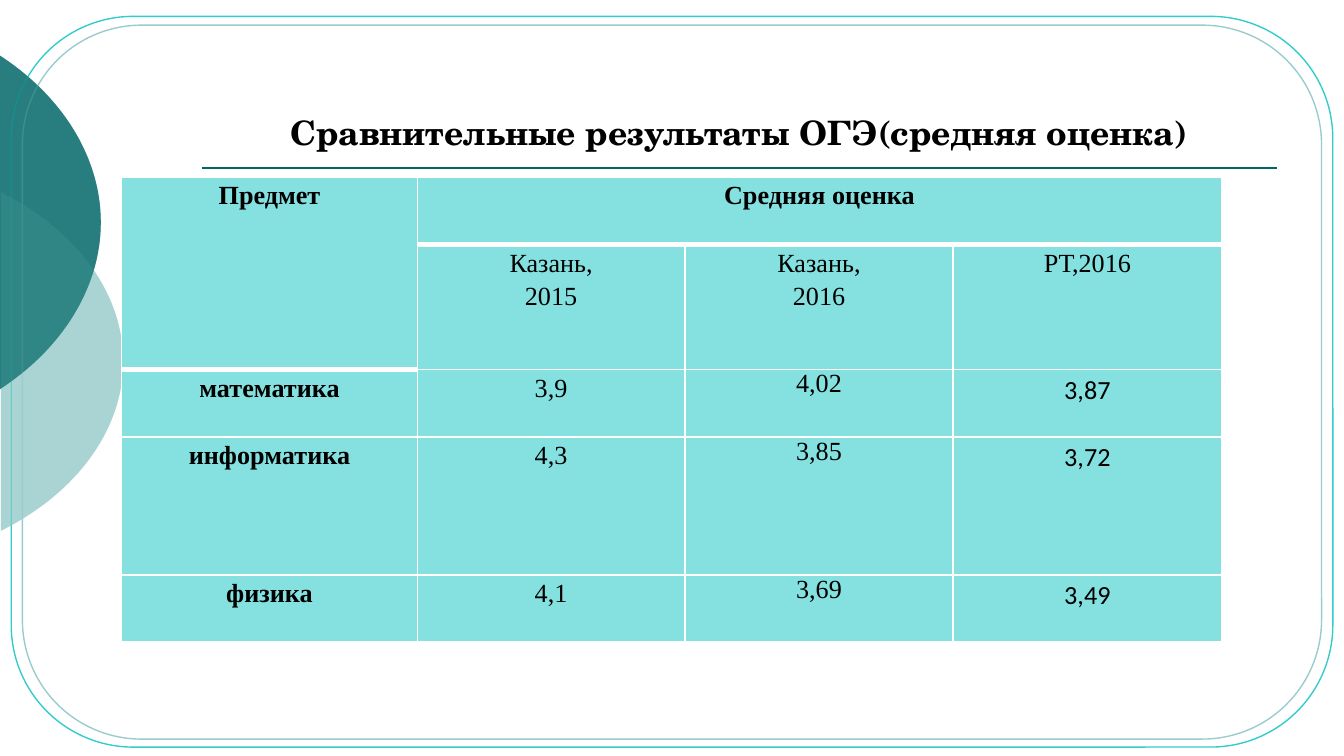
from dataclasses import dataclass

from lxml.etree import SubElement
from pptx import Presentation
from pptx.dml.color import RGBColor as RGB
from pptx.enum.shapes import MSO_CONNECTOR as CONN, MSO_SHAPE as SHAPE
from pptx.enum.text import MSO_ANCHOR as ANCHOR, MSO_AUTO_SIZE as AUTO, PP_ALIGN as ALIGN
from pptx.oxml.ns import qn
from pptx.util import Pt


@dataclass(frozen=True)
class Theme:
    dark: str = "006666"
    light: str = "99CCCC"
    bright: str = "33CCCC"
    cell: str = "85E0E0"
    grid: str = "FFFFFF"
    text: str = "000000"
    title_font: str = "TeX Gyre Schola"
    table_font: str = "Times New Roman"
    number_font: str = "Calibri"
    title_size: int = 18
    table_size: int = 14


class Deck:
    """Draws elements on the current slide in one theme, with lengths in points."""

    def __init__(self, theme, width, height):
        self.theme = theme
        self.prs = Presentation()
        self.prs.slide_width, self.prs.slide_height = Pt(width), Pt(height)
        self.s = self.prs.slides.add_slide(self.prs.slide_layouts[5])

    def style(self, p, font, size, bold):
        p.alignment = ALIGN.CENTER
        p.font.name, p.font.size, p.font.bold = font, Pt(size), bold
        p.font.color.rgb = RGB.from_string(self.theme.text)

    def title(self, text, x, y, w, h):
        sp = self.s.shapes.title
        sp.left, sp.top, sp.width, sp.height = map(Pt, (x, y, w, h))
        tf = sp.text_frame
        tf.text = text
        tf.auto_size, tf.word_wrap = AUTO.NONE, True
        tf.vertical_anchor = ANCHOR.BOTTOM
        self.style(tf.paragraphs[0], self.theme.title_font, self.theme.title_size, True)

    def crescent(self, x, y, w, h, start, bend, rise, color, opacity):
        builder = self.s.shapes.build_freeform(Pt(x), Pt(y))
        builder.add_line_segments([(Pt(x + w), Pt(y)), (Pt(x + w), Pt(y + h))])
        sp = builder.convert_to_shape()
        sp.shadow.inherit = False
        sp.line.fill.background()
        sp.fill.solid()
        sp.fill.fore_color.rgb = RGB.from_string(color)
        clr = next(sp._element.iter(qn("a:srgbClr")))
        SubElement(clr, qn("a:alpha"), val=str(opacity * 1000))
        outline = next(sp._element.iter(qn("a:path")))
        for child in list(outline):
            outline.remove(child)
        upper = [start, bend, (w, rise), (w, h / 2)]
        lower = [(px, h - py) for px, py in reversed(upper[:3])]
        for tag, points in (
            ("moveTo", upper[:1]),
            ("cubicBezTo", upper[1:]),
            ("cubicBezTo", lower),
            ("close", ()),
        ):
            step = SubElement(outline, qn(f"a:{tag}"))
            for px, py in points:
                SubElement(step, qn("a:pt"), x=str(Pt(px)), y=str(Pt(py)))

    def frame(self, x, y, w, h, color):
        sp = self.s.shapes.add_shape(SHAPE.ROUNDED_RECTANGLE, *map(Pt, (x, y, w, h)))
        sp.adjustments[0] = 0.167
        sp.shadow.inherit = False
        sp.fill.background()
        sp.line.color.rgb = RGB.from_string(color)
        sp.line.width = Pt(0.75)

    def rule(self, x1, x2, y, color):
        line = self.s.shapes.add_connector(CONN.STRAIGHT, Pt(x1), Pt(y), Pt(x2), Pt(y))
        line.line.color.rgb = RGB.from_string(color)
        line.line.width = Pt(1)
        SubElement(line._element.spPr, qn("a:effectLst"))

    def borders(self, cell, bottom):
        tc_pr = cell._tc.get_or_add_tcPr()
        for side, width in zip("LRTB", (1, 1, 1, bottom)):
            ln = SubElement(tc_pr, qn(f"a:ln{side}"), w=str(Pt(width)))
            fill = SubElement(ln, qn("a:solidFill"))
            SubElement(fill, qn("a:srgbClr"), val=self.theme.grid)

    def table(self, rows, x, y, widths, heights, merges):
        t = self.theme
        table = self.s.shapes.add_table(
            len(heights), len(widths), Pt(x), Pt(y), Pt(sum(widths)), Pt(sum(heights))
        ).table
        table.first_row = table.horz_banding = False
        for column, width in zip(table.columns, widths):
            column.width = Pt(width)
        for row, height in zip(table.rows, heights):
            row.height = Pt(height)
        for first, last in merges:
            table.cell(*first).merge(table.cell(*last))
        for r, row in enumerate(rows):
            for c, text in enumerate(row):
                cell = table.cell(r, c)
                self.borders(cell, 3 if r == 0 or (r, c) == (1, 0) else 1)
                cell.fill.solid()
                cell.fill.fore_color.rgb = RGB.from_string(t.cell)
                cell.margin_left = cell.margin_right = Pt(5)
                cell.margin_top = cell.margin_bottom = 0
                if not text:
                    continue
                cell.text = text
                font = t.number_font if r > 1 and c == 3 else t.table_font
                for p in cell.text_frame.paragraphs:
                    self.style(p, font, t.table_size, r == 0 or c == 0)
                    p.line_spacing = 1.0 if r > 1 and c == 2 else 1.15


def main():
    theme = Theme()
    deck = Deck(theme, 720, 405)

    def crescents():
        deck.crescent(-222, 85.7, 288, 216, (222.5, 17.3), (262.8, 37.4), 71.3, theme.light, 58)
        deck.crescent(-264, 0, 318, 238.3, (263.5, 29.5), (298, 51.8), 85, theme.dark, 60)

    crescents()
    deck.frame(6, 8.75, 708, 391.5, theme.bright)
    deck.frame(12, 13.5, 696, 382.5, theme.light)
    deck.rule(108, 684, 90, theme.dark)
    crescents()
    deck.title("Сравнительные результаты ОГЭ(средняя оценка)", 108, 17.7, 576, 67.5)
    rows = [
        ("Предмет", "Средняя оценка", "", ""),
        ("", "Казань,\n2015", "Казань,\n2016", "РТ,2016"),
        ("математика", "3,9", "4,02", "3,87"),
        ("информатика", "4,3", "3,85", "3,72"),
        ("физика", "4,1", "3,69", "3,49"),
    ]
    merges = [((0, 0), (1, 0)), ((0, 1), (0, 3))]
    deck.table(rows, 65.2, 95, (158.4, 143.3, 143.8, 143.8), (36, 67, 36, 74, 36), merges)
    deck.prs.save("out.pptx")


if __name__ == "__main__":
    main()
